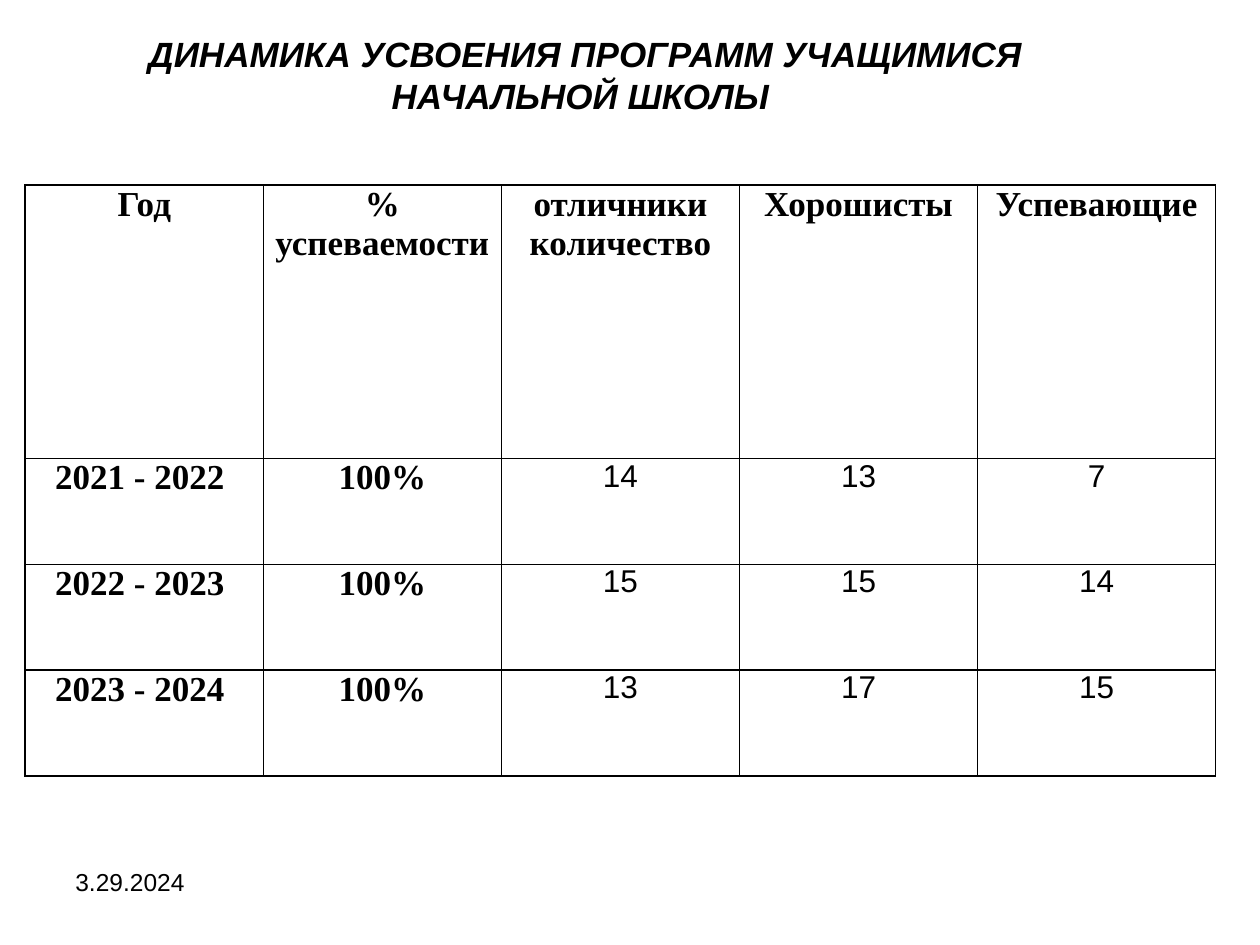
from lxml import etree
from pptx import Presentation
from pptx.dml.color import RGBColor
from pptx.enum.text import MSO_ANCHOR, PP_ALIGN
from pptx.oxml import parse_xml
from pptx.oxml.ns import nsdecls
from pptx.util import Inches, Pt

BLACK = RGBColor(0, 0, 0)
COLUMN_WIDTH = 1.89
ROW_HEIGHTS = [2.17, 0.84, 0.84, 0.84]
RESULTS = [
    ["Год", "% успеваемости", "отличники\nколичество", "Хорошисты", "Успевающие"],
    ["2021 - 2022 ", "100%", "14", "13", "7"],
    ["2022 - 2023 ", "100%", "15", "15", "14"],
    ["2023 - 2024 ", "100%", "13", "17", "15"],
]


def add_run(paragraph, text, size, font_name="Arial", bold=False, italic=False):
    run = paragraph.add_run()
    run.text = text
    run.font.size = Pt(size)
    run.font.name = font_name
    run.font.bold = bold
    run.font.italic = italic
    run.font.color.rgb = BLACK


def add_borders(cell):
    properties = cell._tc.get_or_add_tcPr()
    for position, side in enumerate(["lnL", "lnR", "lnT", "lnB"]):
        border = parse_xml(f'<a:{side} {nsdecls("a")} w="{Pt(1)}"/>')
        fill = etree.SubElement(border, border.tag.replace(side, "solidFill"))
        etree.SubElement(fill, border.tag.replace(side, "srgbClr"), val=str(BLACK))
        properties.insert(position, border)


prs = Presentation()
prs.slide_width, prs.slide_height = Inches(10), Inches(7.5)
slide = prs.slides.add_slide(prs.slide_layouts[5])

# Date
date = slide.shapes.add_textbox(Inches(0.5), Inches(6.83), Inches(2.33), Inches(0.52))
date.text_frame.word_wrap = True
add_run(date.text_frame.paragraphs[0], "3.29.2024", 14)

# Results by school year
table_frame = slide.shapes.add_table(
    len(RESULTS), len(RESULTS[0]), Inches(0.2), Inches(1.47),
    Inches(COLUMN_WIDTH * len(RESULTS[0])), Inches(sum(ROW_HEIGHTS)))
results = table_frame.table
results.first_row = results.horz_banding = False
for column in results.columns:
    column.width = Inches(COLUMN_WIDTH)
for row, height in zip(results.rows, ROW_HEIGHTS):
    row.height = Inches(height)

for r, values in enumerate(RESULTS):
    for c, value in enumerate(values):
        cell = results.cell(r, c)
        cell.fill.background()
        add_borders(cell)
        cell.margin_left = cell.margin_right = Inches(0.07)
        cell.margin_top = cell.margin_bottom = 0
        is_count = r > 0 and c > 1
        for i, line in enumerate(value.split("\n")):
            frame = cell.text_frame
            paragraph = frame.add_paragraph() if i else frame.paragraphs[0]
            paragraph.alignment = PP_ALIGN.CENTER
            if is_count:
                add_run(paragraph, line, 18)
            else:
                add_run(paragraph, line, 20, "Times New Roman", bold=True)

# Title
title = slide.shapes.title
title.left, title.top = Inches(0.43), Inches(0.21)
title.width, title.height = Inches(8.43), Inches(0.77)
title.text_frame.word_wrap = True
title.text_frame.vertical_anchor = MSO_ANCHOR.MIDDLE
heading = title.text_frame.paragraphs[0]
heading.alignment = PP_ALIGN.CENTER
add_run(heading, "ДИНАМИКА УСВОЕНИЯ ПРОГРАММ УЧАЩИМИСЯ НАЧАЛЬНОЙ ШКОЛЫ ", 20,
        bold=True, italic=True)

prs.save("out.pptx")
